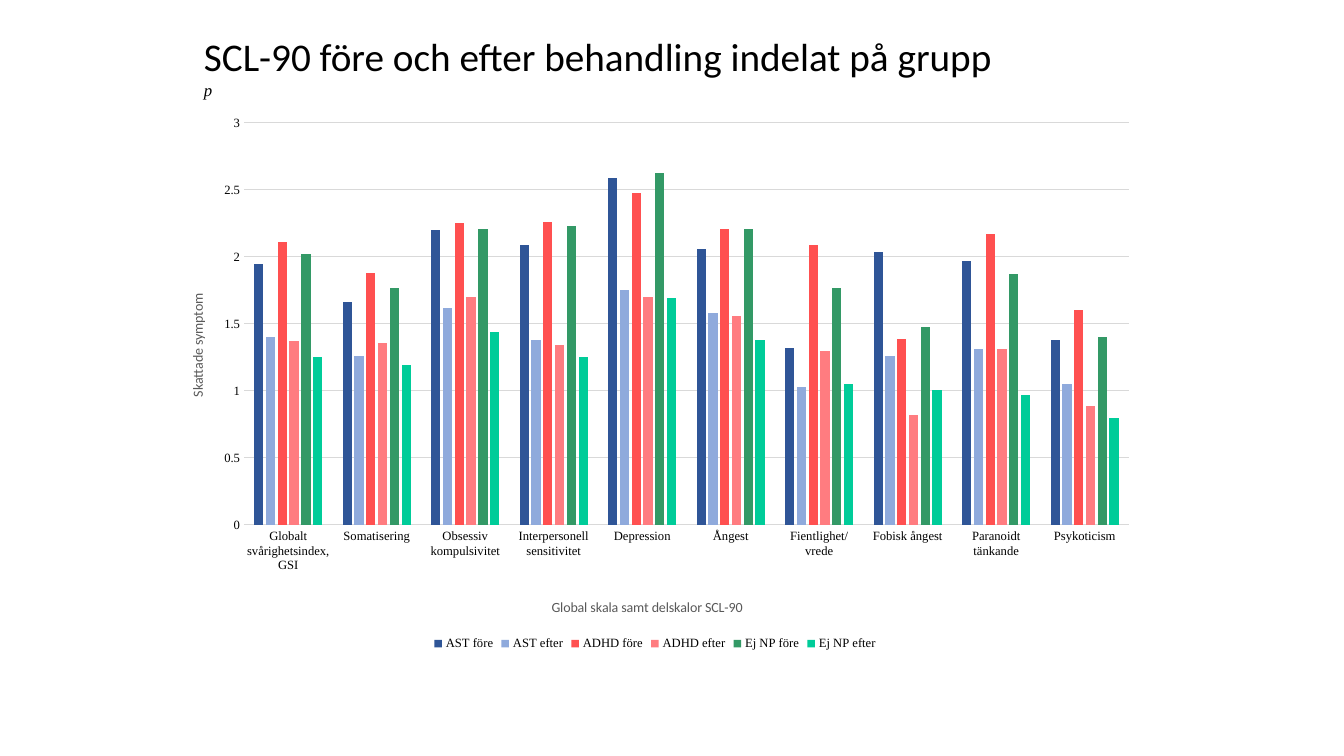
"""Build a slide comparing SCL-90 ratings before and after treatment by group."""
from lxml.etree import SubElement
from pptx import Presentation
from pptx.chart.data import CategoryChartData
from pptx.dml.color import RGBColor
from pptx.enum.chart import XL_CHART_TYPE, XL_LEGEND_POSITION, XL_TICK_MARK
from pptx.enum.text import MSO_ANCHOR, MSO_AUTO_SIZE
from pptx.oxml import parse_xml
from pptx.oxml.ns import nsdecls, qn
from pptx.util import Emu, Pt

EMU_PER_PX = 914400 / 100.8
COLORS = {
    "text": "000000", "axis title": "595959", "grid": "D9D9D9",
    "AST före": "2F5597", "AST efter": "8FAADC",
    "ADHD före": "FF5050", "ADHD efter": "FF7C80",
    "Ej NP före": "339966", "Ej NP efter": "00CC99",
}
SUBSCALES = [
    "Globalt svårighetsindex, GSI", "Somatisering", "Obsessiv kompulsivitet",
    "Interpersonell sensitivitet", "Depression", "Ångest", "Fientlighet/ vrede",
    "Fobisk ångest", "Paranoidt tänkande", "Psykoticism",
]
RATINGS = {
    "AST före": [1.95, 1.66, 2.2, 2.09, 2.59, 2.06, 1.32, 2.04, 1.97, 1.38],
    "AST efter": [1.4, 1.26, 1.62, 1.38, 1.75, 1.58, 1.03, 1.26, 1.31, 1.05],
    "ADHD före": [2.11, 1.88, 2.25, 2.26, 2.48, 2.21, 2.09, 1.39, 2.17, 1.6],
    "ADHD efter": [1.37, 1.36, 1.7, 1.34, 1.7, 1.56, 1.3, 0.82, 1.31, 0.89],
    "Ej NP före": [2.02, 1.77, 2.21, 2.23, 2.63, 2.21, 1.77, 1.48, 1.87, 1.4],
    "Ej NP efter": [1.25, 1.19, 1.44, 1.25, 1.69, 1.38, 1.05, 1.01, 0.97, 0.8],
}


def px(length):
    """Turn pixels into EMU."""
    return Emu(round(length * EMU_PER_PX))


def color(name):
    """Look up a named colour."""
    return RGBColor.from_string(COLORS[name])


def set_font(font, family, size, color_name="text"):
    """Set family, size and colour of a font."""
    font.name = family
    font.size = Pt(size)
    font.color.rgb = color(color_name)


def set_layout(part, index, box, **fractions):
    """Fix a chart part at pixel offsets expressed as shares of the chart box."""
    for previous in part.findall(qn("c:layout")):
        part.remove(previous)
    layout = parse_xml(f"<c:layout {nsdecls('c')}><c:manualLayout/></c:layout>")
    part.insert(index, layout)
    manual = layout[0]
    if "w" in fractions:
        SubElement(manual, qn("c:layoutTarget")).set("val", "inner")
    for mode in ("xMode", "yMode"):
        SubElement(manual, qn(f"c:{mode}")).set("val", "edge")
    for key, length in fractions.items():
        whole = box[2] if key in "xw" else box[3]
        SubElement(manual, qn(f"c:{key}")).set("val", str(length / whole))


def add_heading(slide, box):
    """Place the heading with its small italic second line."""
    frame = slide.shapes.add_textbox(*map(px, box)).text_frame
    frame.word_wrap = True
    frame.auto_size = MSO_AUTO_SIZE.SHAPE_TO_FIT_TEXT
    frame.vertical_anchor = MSO_ANCHOR.MIDDLE
    heading = frame.paragraphs[0]
    heading.text = "SCL-90 före och efter behandling indelat på grupp"
    set_font(heading.font, "Calibri", 28)
    statistic = frame.add_paragraph()
    statistic.text = "p"
    set_font(statistic.font, "Times New Roman", 12)
    statistic.font.italic = True


def style_axis(axis, title, box, x, y):
    """Style an axis and place its title at x, y within the chart box."""
    axis.major_tick_mark = axis.minor_tick_mark = XL_TICK_MARK.NONE
    set_font(axis.tick_labels.font, "Times New Roman", 9)
    caption = axis.axis_title.text_frame.paragraphs[0]
    caption.text = title
    set_font(caption.font, "Calibri", 10, "axis title")
    caption.font.bold = False
    set_layout(axis.axis_title._element, 1, box, x=x, y=y)


def add_ratings_chart(slide, box):
    """Place the clustered columns of rated symptoms."""
    data = CategoryChartData()
    data.categories = SUBSCALES
    for group, values in RATINGS.items():
        data.add_series(group, values)
    chart = slide.shapes.add_chart(
        XL_CHART_TYPE.COLUMN_CLUSTERED, *map(px, box), data).chart
    chart.has_title = False
    set_font(chart.font, "Calibri", 10)

    plot = chart.plots[0]
    plot.gap_width, plot.overlap, plot.vary_by_categories = 219, -27, False
    for series in plot.series:
        series.format.fill.solid()
        series.format.fill.fore_color.rgb = color(series.name)
        series.invert_if_negative = False
    set_layout(chart._chartSpace.chart.plotArea, 0, box, x=82, y=17, w=885, h=402)

    subscales, ratings = chart.category_axis, chart.value_axis
    style_axis(subscales, "Global skala samt delskalor SCL-90", box, 387, 490)
    style_axis(ratings, "Skattade symptom", box, 24, 185)
    ratings.minimum_scale, ratings.maximum_scale, ratings.major_unit = 0, 3, 0.5
    ratings.tick_labels.number_format = "General"
    ratings.tick_labels.number_format_is_linked = False
    ratings.format.line.fill.background()
    for line in (subscales.format.line, ratings.major_gridlines.format.line):
        line.color.rgb = color("grid")
        line.width = Pt(0.75)

    chart.has_legend = True
    chart.legend.position = XL_LEGEND_POSITION.BOTTOM
    chart.legend.include_in_layout = False
    set_font(chart.legend.font, "Times New Roman", 9)


def main():
    """Build and save the slide."""
    deck = Presentation()
    deck.slide_width, deck.slide_height = px(1344), px(756)
    slide = deck.slides.add_slide(deck.slide_layouts[6])
    add_heading(slide, (194, 27, 1090, 78))
    add_ratings_chart(slide, (162, 106, 986, 549))
    deck.save("out.pptx")


if __name__ == "__main__":
    main()
